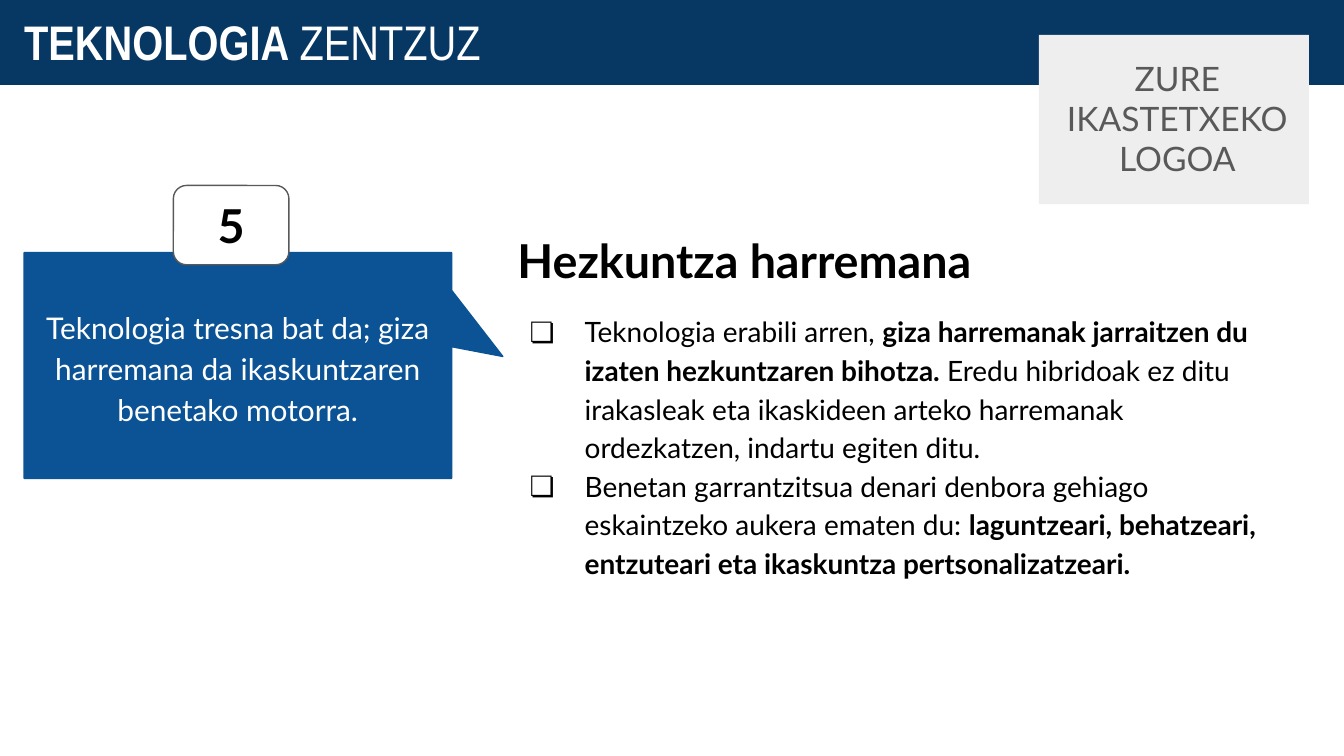
from lxml.etree import SubElement
from pptx import Presentation
from pptx.dml.color import RGBColor
from pptx.enum.shapes import MSO_SHAPE as Shape
from pptx.enum.text import MSO_ANCHOR as Anchor, MSO_AUTO_SIZE as AutoSize, PP_ALIGN as Align
from pptx.oxml.ns import qn
from pptx.util import Inches, Pt

# Content: each paragraph is a list of (text, bold) runs
BANNER = [("TEKNOLOGIA ", True), ("ZENTZUZ", False)]
LOGO_NOTE = [("ZURE IKASTETXEKO LOGOA", False)]
NUMBER = [("5", True)]
MOTTO = [("Teknologia tresna bat da; giza harremana da ikaskuntzaren benetako motorra.", False)]
HEADING = [("Hezkuntza harremana", True)]
POINTS = [
    [("Teknologia erabili arren, ", False),
     ("giza harremanak jarraitzen du izaten hezkuntzaren bihotza. ", True),
     ("Eredu hibridoak ez ditu irakasleak eta ikaskideen arteko harremanak "
      "ordezkatzen, indartu egiten ditu.", False)],
    [("Benetan garrantzitsua denari denbora gehiago eskaintzeko aukera ematen du: ", False),
     ("laguntzeari, behatzeari, entzuteari eta ikaskuntza pertsonalizatzeari.", True)],
]

# Widescreen slide, 16:9
WIDTH = 10
HEIGHT = WIDTH * 9 / 16
MARGIN = 0.18
NAVY, BLUE, WHITE, BLACK = "073763", "0B5394", "FFFFFF", "000000"
GREY, PALE = "595959", "EEEEEE"


def color(hex_code):
    return RGBColor.from_string(hex_code)


def place(part, left, top, width, height):
    part.left, part.top = Inches(left), Inches(top)
    part.width, part.height = Inches(width), Inches(height)


def paint(part, fill, line=None, weight=0.75):
    part.fill.solid()
    part.fill.fore_color.rgb = color(fill)
    if line:
        part.line.color.rgb = color(line)
        part.line.width = Pt(weight)
    else:
        part.line.fill.background()


def prepare(part, anchor, left_inset=0.1):
    frame = part.text_frame
    frame.word_wrap = True
    frame.auto_size = AutoSize.NONE
    frame.vertical_anchor = anchor
    frame.margin_left = Inches(left_inset)
    frame.margin_right = frame.margin_top = frame.margin_bottom = Inches(0.1)
    return frame


def write(paragraph, runs, size, ink, align=Align.LEFT, font="Lato", spacing=None, before=0):
    paragraph.alignment = align
    paragraph.line_spacing = spacing
    paragraph.space_before = Pt(before)
    for text, bold in runs:
        run = paragraph.add_run()
        run.text = text
        run.font.name, run.font.size, run.font.bold = font, Pt(size), bold
        run.font.color.rgb = color(ink)


def set_bullet(paragraph, mark=None):
    props = paragraph._p.get_or_add_pPr()
    props.set("marL", str(Inches(0.5) if mark else 0))
    props.set("indent", str(Inches(-0.41) if mark else 0))
    if mark:
        tint = SubElement(props, qn("a:buClr"))
        SubElement(tint, qn("a:srgbClr"), val=BLACK)
        SubElement(props, qn("a:buFont"), typeface="Lato")
        SubElement(props, qn("a:buChar"), char=mark)
    else:
        SubElement(props, qn("a:buNone"))


def add_box(slide, kind, area, fill, line=None):
    box = slide.shapes.add_shape(kind, *map(Inches, area))
    box.shadow.inherit = False
    paint(box, fill, line)
    return box


deck = Presentation()
deck.slide_width, deck.slide_height = Inches(WIDTH), Inches(HEIGHT)
slide = deck.slides.add_slide(deck.slide_layouts[1])
banner, body = slide.shapes.title, slide.placeholders[1]

# Banner
place(banner, 0, 0, WIDTH, 0.62)
paint(banner, NAVY, NAVY, 1.5)
write(prepare(banner, Anchor.BOTTOM, MARGIN).paragraphs[0], BANNER, 26, WHITE, font="Arial Narrow")

# Heading and points
place(body, 3.75, 1.56, 5.78, 4.67)
body_frame = prepare(body, Anchor.TOP)
heading = body_frame.paragraphs[0]
write(heading, HEADING, 25, BLACK, spacing=1.15, before=14)
set_bullet(heading)
for index, point in enumerate(POINTS):
    item = body_frame.add_paragraph()
    write(item, point, 15, BLACK, spacing=1.15, before=0 if index else 12)
    set_bullet(item, "❏")

# Motto callout pointing at the points
callout = add_box(slide, Shape.ROUNDED_RECTANGULAR_CALLOUT, (MARGIN, 1.88, 3.18, 1.68), BLUE, BLUE)
for index, value in enumerate((0.62, -0.04, 0)):
    callout.adjustments[index] = value
write(prepare(callout, Anchor.MIDDLE).paragraphs[0], MOTTO, 16, WHITE, Align.CENTER,
      spacing=1.15, before=8)

# Number badge
badge = add_box(slide, Shape.ROUNDED_RECTANGLE, (1.29, 1.38, 0.86, 0.59), WHITE, GREY)
write(prepare(badge, Anchor.MIDDLE).paragraphs[0], NUMBER, 25, BLACK, Align.CENTER)

# School logo area
add_box(slide, Shape.RECTANGLE, (7.73, 0.26, 2.01, 1.26), PALE)
logo_note = slide.shapes.add_textbox(*map(Inches, (7.78, 0.33, 1.96, 0.8)))
write(prepare(logo_note, Anchor.TOP).paragraphs[0], LOGO_NOTE, 18, GREY, Align.CENTER)

deck.save("out.pptx")
